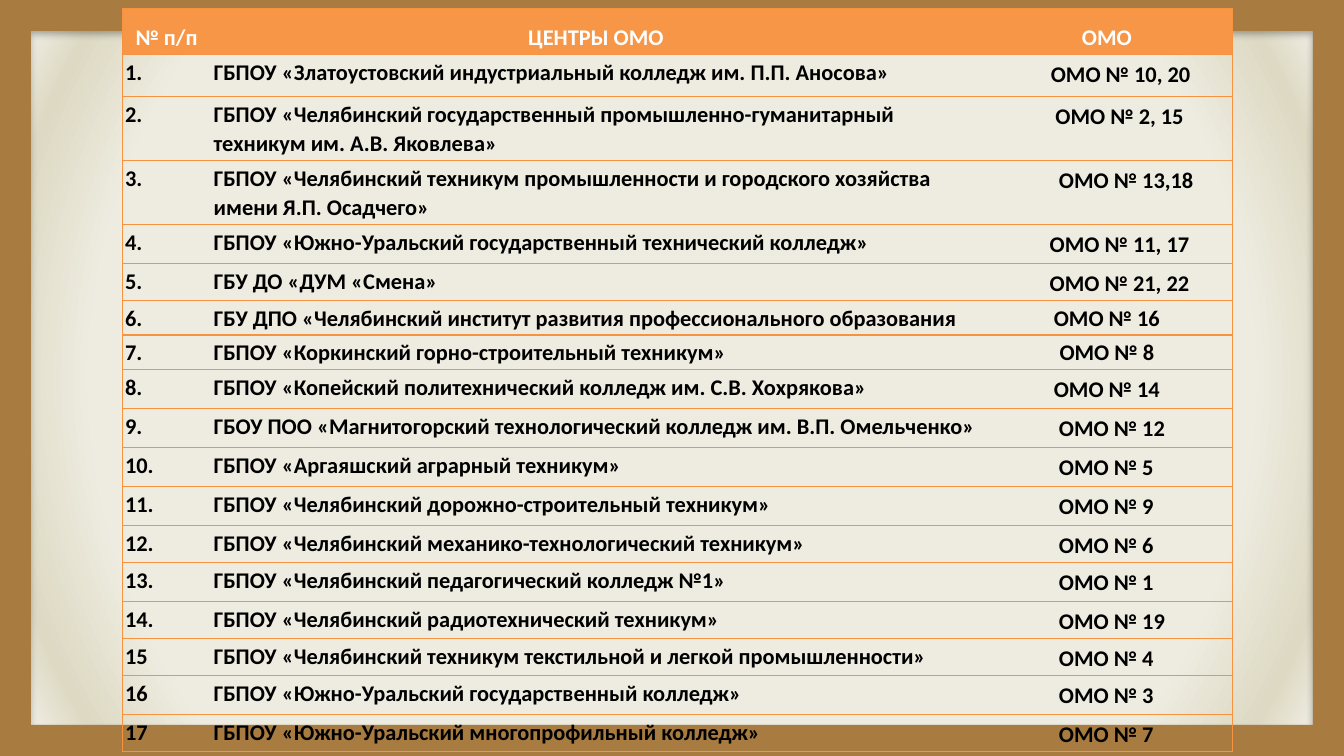
from dataclasses import dataclass
from lxml.etree import SubElement as Sub
from pptx import Presentation
from pptx.dml.color import RGBColor as RGB
from pptx.enum.shapes import MSO_SHAPE as Shape
from pptx.enum.text import PP_ALIGN as Align
from pptx.oxml.ns import qn
from pptx.util import Pt


@dataclass(frozen=True)
class Theme:
    font: str = "Calibri"
    size: float = 12
    wood: str = "A87B40"
    head: str = "F79646"
    rule: str = "F69240"
    light: str = "FFFFFF"
    ink: str = "000000"
    glow: tuple = ((75, "EEECE1"), (88, "DDD9C3"), (100, "FFFFFF"))


@dataclass(frozen=True)
class Para:
    lead: float = 1.07
    align: Align = Align.LEFT
    left: float = 0
    first: float = 0


HEAD = Para(1.5, Align.CENTER)
NAME = Para()
SNUG = Para(1.07, Align.CENTER)
MID = Para(1.15, Align.CENTER)
PUSH = Para(1.15, Align.CENTER, 13.6)
EDGE = Para(1.15, left=36)
STEP = Para(1.15, left=36, first=4.3)

# Row heights in points
TALL, WIDE, ROW, LOW = 31.7, 22.3, 20.9, 18

COLS = (47.5, 412.5, 135)
TITLES = ("№ п/п", "ЦЕНТРЫ ОМО", "ОМО")
CENTERS = (
    ("1.", "ГБПОУ «Златоустовский индустриальный колледж им. П.П. Аносова»", "10, 20", EDGE, WIDE),
    ("2.", "ГБПОУ «Челябинский государственный промышленно-гуманитарный техникум им. А.В. Яковлева»",
     "2, 15", PUSH, TALL),
    ("3.", "ГБПОУ «Челябинский техникум промышленности и городского хозяйства имени Я.П. Осадчего»",
     "13,18", STEP, TALL),
    ("4.", "ГБПОУ «Южно-Уральский государственный технический колледж»", "11, 17", PUSH, ROW),
    ("5.", "ГБУ ДО «ДУМ «Смена»", "21, 22", PUSH, LOW),
    ("6.", "ГБУ ДПО «Челябинский институт развития профессионального образования", "16", SNUG, LOW),
    ("7.", "ГБПОУ «Коркинский горно-строительный техникум»", "8", SNUG, LOW),
    ("8.", "ГБПОУ «Копейский политехнический колледж им. С.В. Хохрякова»", "14", MID, ROW),
    ("9.", "ГБОУ ПОО «Магнитогорский технологический колледж им. В.П. Омельченко»", "12", STEP, ROW),
    ("10.", "ГБПОУ «Аргаяшский аграрный техникум»", "5", STEP, ROW),
    ("11.", "ГБПОУ «Челябинский дорожно-строительный техникум»", "9", STEP, ROW),
    ("12.", "ГБПОУ «Челябинский механико-технологический техникум»", "6", STEP, LOW),
    ("13.", "ГБПОУ «Челябинский педагогический колледж №1»", "1", STEP, ROW),
    ("14.", "ГБПОУ «Челябинский радиотехнический техникум»", "19", STEP, LOW),
    ("15", "ГБПОУ «Челябинский техникум текстильной и легкой промышленности»", "4", STEP, LOW),
    ("16", "ГБПОУ «Южно-Уральский государственный колледж»", "3", STEP, ROW),
    ("17", "ГБПОУ «Южно-Уральский многопрофильный колледж»", "7", STEP, LOW),
)


class Deck:
    def __init__(self, theme, wide, high):
        self.theme, self.wide, self.high = theme, wide, high
        self.prs = Presentation()
        self.prs.slide_width, self.prs.slide_height = Pt(wide), Pt(high)
        self.slide = self.prs.slides.add_slide(self.prs.slide_layouts[6])

    def ground(self):
        """Radial gradient behind everything."""
        self.slide.background.fill.gradient()
        grad = next(self.slide.element.iter(qn("a:gradFill")))
        for old in list(grad):
            grad.remove(old)
        stops = Sub(grad, qn("a:gsLst"))
        for pos, tint in self.theme.glow:
            stop = Sub(stops, qn("a:gs"), pos=str(pos * 1000))
            Sub(stop, qn("a:srgbClr"), val=tint)
        ring = Sub(grad, qn("a:path"), path="circle")
        Sub(ring, qn("a:fillToRect"), {side: "50000" for side in "ltrb"})

    def frame(self, thick):
        """Frame round the slide with a soft shadow."""
        box = self.slide.shapes.add_shape(Shape.FRAME, 0, 0, Pt(self.wide), Pt(self.high))
        box.adjustments[0] = thick
        box.fill.solid()
        box.fill.fore_color.rgb = RGB.from_string(self.theme.wood)
        box.line.fill.background()
        box.shadow.inherit = False
        glow = next(box.element.iter(qn("a:effectLst")))
        cast = Sub(glow, qn("a:outerShdw"), blurRad=str(Pt(3.5)), dist=str(Pt(2.2)),
                   dir="5400000", rotWithShape="0")
        tint = Sub(cast, qn("a:srgbClr"), val=self.theme.ink)
        Sub(tint, qn("a:alpha"), val="32000")

    def rules(self, cell, sides):
        """Border lines on the given sides, in L, R, T, B order."""
        props = cell._tc.get_or_add_tcPr()
        for side in sides:
            line = Sub(props, qn("a:ln" + side), w=str(Pt(0.75)))
            fill = Sub(line, qn("a:solidFill"))
            Sub(fill, qn("a:srgbClr"), val=self.theme.rule)

    def cell(self, cell, text, para, tint):
        cell.margin_left = cell.margin_right = Pt(1.5)
        cell.margin_top = cell.margin_bottom = Pt(1.5)
        cell.text = text
        line = cell.text_frame.paragraphs[0]
        line.alignment, line.line_spacing = para.align, para.lead
        props = line._p.get_or_add_pPr()
        props.set("marL", str(Pt(para.left)))
        props.set("indent", str(Pt(para.first)))
        font = line.font
        font.name, font.size, font.bold = self.theme.font, Pt(self.theme.size), True
        font.color.rgb = RGB.from_string(tint)

    def table(self, left, top, cols, highs, rows):
        """Table of rows, each a list of (text, paragraph style)."""
        item = self.slide.shapes.add_table(len(rows), len(cols), Pt(left), Pt(top),
                                           Pt(sum(cols)), Pt(sum(highs)))
        grid = item.table
        grid.first_row = grid.horz_banding = False
        # Plain style without a grid
        next(item.element.iter(qn("a:tableStyleId"))).text = "{2D5ABB26-0587-4C30-8999-92F81FD0307C}"
        for col, wide in zip(grid.columns, cols):
            col.width = Pt(wide)
        for r, (high, row) in enumerate(zip(highs, rows)):
            grid.rows[r].height = Pt(high)
            for c, (text, para) in enumerate(row):
                cell = grid.cell(r, c)
                self.cell(cell, text, para, self.theme.ink if r else self.theme.light)
                self.rules(cell, ("L" if c == 0 else "R" if c == len(cols) - 1 else "") + "TB")
                if r:
                    cell.fill.background()
                else:
                    cell.fill.solid()
                    cell.fill.fore_color.rgb = RGB.from_string(self.theme.head)


def main():
    deck = Deck(Theme(), 720, 405)
    deck.ground()
    deck.frame(0.041)

    # Header row, then one row per center
    rows = [[(text, HEAD) for text in TITLES]]
    rows += [[(num, NAME), (name, NAME), (f"ОМО № {omo}", para)]
             for num, name, omo, para, _ in CENTERS]
    highs = [21.6] + [row[-1] for row in CENTERS]
    deck.table(65.5, 4.4, COLS, highs, rows)
    deck.prs.save("out.pptx")


if __name__ == "__main__":
    main()
